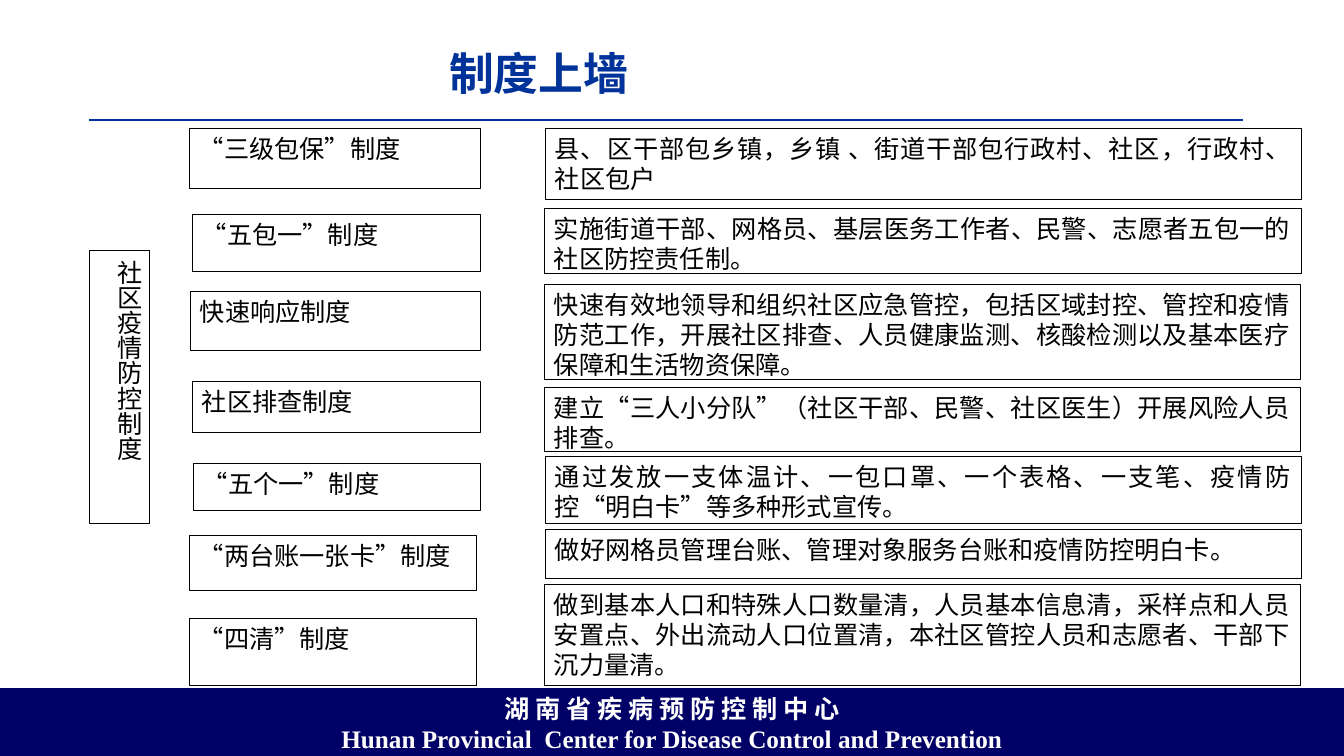
from pptx import Presentation, util as u
from pptx.dml.color import RGBColor
from pptx.enum import shapes, text
from pptx.oxml import ns
from lxml import etree

THEME = {
    "blue": "003399", "navy": "000066", "black": "000000", "white": "FFFFFF",
    "sans": "Noto Sans CJK SC", "serif": "Times New Roman",
    "head": 32, "body": 18,
}
WIDE, HIGH = 1344, 756
UNIT = 914400 / 100.8

TITLE = "制度上墙"
SIDE = "社区疫情防控制度"
FOOT = [
    ("湖 南 省 疾 病 预 防 控 制 中 心", "sans"),
    ("Hunan Provincial  Center for Disease Control and Prevention", "serif"),
]
RULES = [
    ("“三级包保”制度", (189, 128, 291, 60),
     "县、区干部包乡镇，乡镇 、街道干部包行政村、社区，行政村、社区包户", (545, 128, 756, 71)),
    ("“五包一”制度", (192, 214, 288, 57),
     "实施街道干部、网格员、基层医务工作者、民警、志愿者五包一的社区防控责任制。", (544, 208, 757, 65)),
    ("快速响应制度", (190, 291, 290, 59),
     "快速有效地领导和组织社区应急管控，包括区域封控、管控和疫情防范工作，开展社区排查、人员健康监测、核酸检测以及基本医疗保障和生活物资保障。",
     (544, 284, 756, 95)),
    ("社区排查制度", (192, 381, 288, 51),
     "建立“三人小分队”（社区干部、民警、社区医生）开展风险人员排查。", (544, 387, 756, 64)),
    ("“五个一”制度", (193, 463, 287, 47),
     "通过发放一支体温计、一包口罩、一个表格、一支笔、疫情防控“明白卡”等多种形式宣传。", (545, 456, 756, 67)),
    ("“两台账一张卡”制度", (189, 535, 287, 55),
     "做好网格员管理台账、管理对象服务台账和疫情防控明白卡。", (545, 529, 756, 49)),
    ("“四清”制度", (189, 618, 287, 67),
     "做到基本人口和特殊人口数量清，人员基本信息清，采样点和人员安置点、外出流动人口位置清，本社区管控人员和志愿者、干部下沉力量清。",
     (544, 584, 756, 101)),
]


def px(n):
    return u.Emu(round(n * UNIT))


def tint(name):
    return RGBColor.from_string(THEME[name])


def put(obj, vals):
    for key, val in vals.items():
        setattr(obj, key, val)


def place(shape, area):
    put(shape, dict(zip(("left", "top", "width", "height"), map(px, area))))


def write(shape, lines, color="black", size="body", bold=False, align="JUSTIFY", anchor="TOP"):
    frame = shape.text_frame
    put(frame, {"word_wrap": True, "auto_size": text.MSO_AUTO_SIZE.NONE,
                "vertical_anchor": getattr(text.MSO_ANCHOR, anchor)})
    for i, (words, face) in enumerate(lines):
        para = frame.add_paragraph() if i else frame.paragraphs[0]
        para.alignment = getattr(text.PP_ALIGN, align)
        run = para.add_run()
        run.text = words
        put(run.font, {"name": THEME[face], "size": u.Pt(THEME[size]), "bold": bold})
        run.font.color.rgb = tint(color)
        east = etree.SubElement(run.font._element, ns.qn("a:ea"))
        east.set("typeface", THEME[face])
    return frame


def box(slide, area, lines, fill="white", edge="black", **look):
    shape = slide.shapes.add_shape(shapes.MSO_SHAPE.RECTANGLE, *map(px, area))
    shape.shadow.inherit = False
    shape.fill.solid()
    shape.fill.fore_color.rgb = tint(fill)
    if edge:
        shape.line.color.rgb = tint(edge)
        shape.line.width = u.Pt(0.5)
    else:
        shape.line.fill.background()
    return write(shape, lines, **look)


def main():
    deck = Presentation()
    put(deck, {"slide_width": px(WIDE), "slide_height": px(HIGH)})
    slide = deck.slides.add_slide(deck.slide_layouts[5])

    box(slide, (0, 688, WIDE, HIGH - 688), FOOT, "navy", None,
        color="white", bold=True, align="CENTER")

    line = slide.shapes.add_connector(shapes.MSO_CONNECTOR.STRAIGHT, *map(px, (89, 120, 1243, 120)))
    line.line.color.rgb = tint("blue")
    line.line.width = u.Pt(1.5)
    etree.SubElement(line._element.spPr, ns.qn("a:effectLst"))

    title = slide.shapes.title
    place(title, (439, 40, 453, 71))
    frame = write(title, [(TITLE, "sans")], "blue", "head", True, "LEFT", "MIDDLE")
    frame.paragraphs[0].line_spacing = 0.9

    side = box(slide, (89, 250, 60, 273), [(SIDE, "sans")])
    side._txBody.bodyPr.set("vert", "eaVert")

    for name, left, about, right in RULES:
        box(slide, left, [(name, "sans")])
        box(slide, right, [(about, "sans")])

    deck.save("out.pptx")


if __name__ == "__main__":
    main()
